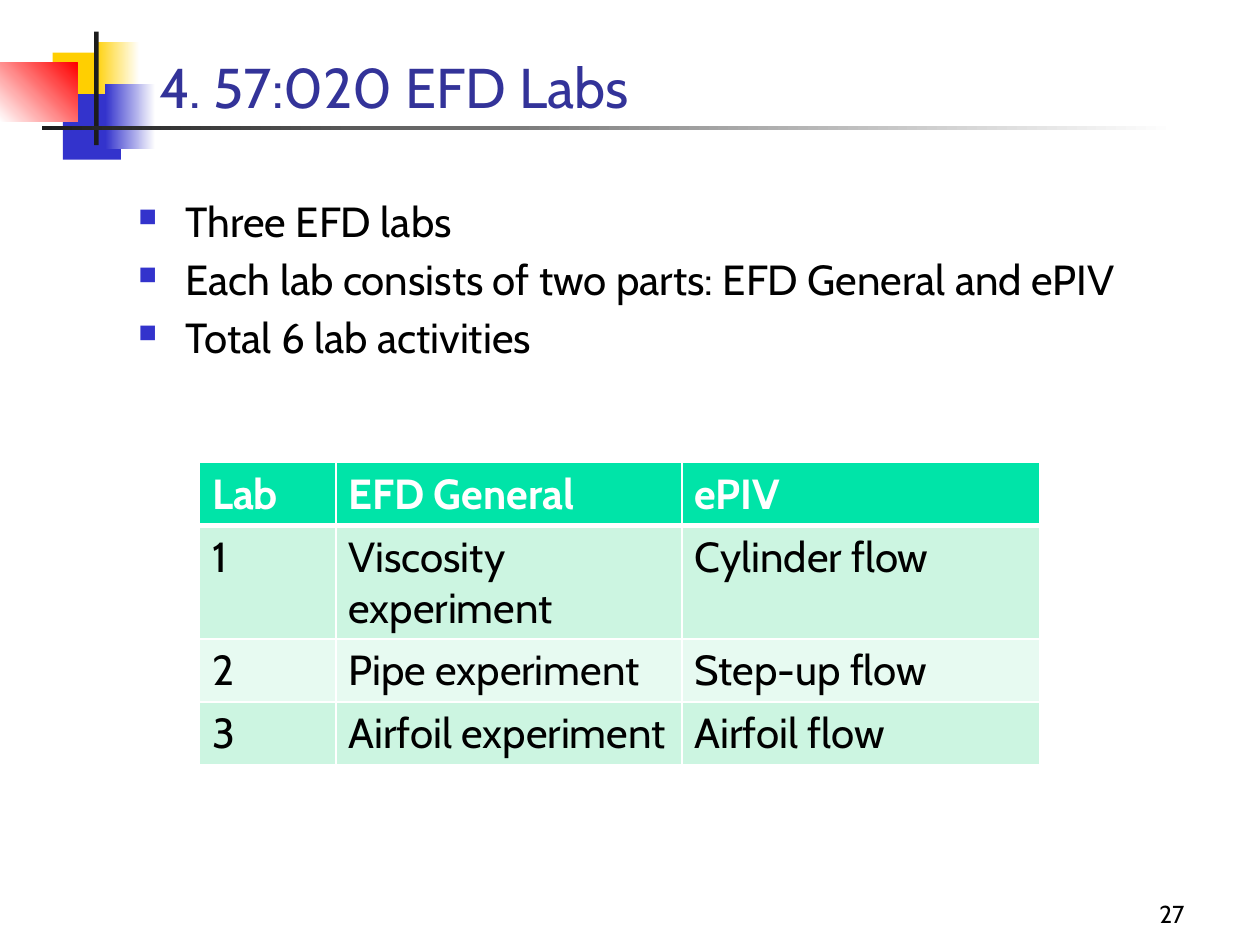
import dataclasses

import pptx
import pptx.dml.color
import pptx.enum.shapes
import pptx.enum.text
import pptx.oxml
import pptx.oxml.ns
import pptx.util
from pptx.util import Cm


@dataclasses.dataclass(frozen=True)
class Theme:
    font: str = "Cabin"
    title_size: int = 32
    body_size: int = 24
    number_size: int = 14
    title: str = "333399"
    text: str = "000000"
    white: str = "FFFFFF"
    yellow: str = "FFCF01"
    blue: str = "3333CC"
    red: str = "FF0000"
    rule: str = "1C1C1C"
    header: str = "00E4A8"
    bands: tuple = ("CCF5E1", "E7FAF1")


theme = Theme()
color = pptx.dml.color.RGBColor.from_string
anchors = pptx.enum.text.MSO_ANCHOR


def style(paragraph, size, hex_color, bold=False):
    paragraph.font.name = theme.font
    paragraph.font.size = pptx.util.Pt(size)
    paragraph.font.color.rgb = color(hex_color)
    paragraph.font.bold = bold


def add_text(left, top, width, height, anchor, lines, size, hex_color):
    """Add a wrapping text box and return its paragraphs."""
    box = slide.shapes.add_textbox(Cm(left), Cm(top), Cm(width), Cm(height))
    frame = box.text_frame
    frame.word_wrap = True
    frame.vertical_anchor = anchor
    frame.text = "\n".join(lines)
    for paragraph in frame.paragraphs:
        style(paragraph, size, hex_color)
    return frame.paragraphs


presentation = pptx.Presentation()
presentation.slide_width, presentation.slide_height = Cm(25.4), Cm(19.05)
slide = presentation.slides.add_slide(presentation.slide_layouts[6])

# Corner ornament: left, top, width, height, colours, gradient angle
ornament = [
    (1.06, 1.06, 1.22, 1.32, [theme.yellow], 0),
    (1.9, 0.85, 0.91, 1.32, [theme.yellow, theme.white], 0),
    (1.27, 1.9, 1.17, 1.32, [theme.blue], 0),
    (2.12, 1.69, 1.01, 1.32, [theme.blue, theme.white], 0),
    (0, 1.27, 1.56, 1.18, [theme.white, theme.red], 45),
    (1.9, 0.64, 0.09, 2.29, [theme.rule], 0),
    (0.85, 2.54, 22.86, 0.08, [theme.rule, theme.white], 0),
]
for left, top, width, height, colors, angle in ornament:
    shape = slide.shapes.add_shape(
        pptx.enum.shapes.MSO_SHAPE.RECTANGLE, Cm(left), Cm(top), Cm(width), Cm(height))
    shape.shadow.inherit = False
    shape.line.fill.background()
    if len(colors) == 1:
        shape.fill.solid()
        shape.fill.fore_color.rgb = color(colors[0])
    else:
        shape.fill.gradient()
        shape.fill.gradient_angle = angle
        for stop, hex_color in zip(shape.fill.gradient_stops, colors):
            stop.color.rgb = color(hex_color)

add_text(2.96, 0, 21.64, 2.54, anchors.BOTTOM, ["4. 57:020 EFD Labs"],
         theme.title_size, theme.title)
number = add_text(18.84, 17.57, 5.29, 1.27, anchors.BOTTOM, ["27"],
                  theme.number_size, theme.text)[0]
number.alignment = pptx.enum.text.PP_ALIGN.RIGHT

# Lab table
rows = [
    ("Lab", "EFD General", "ePIV"),
    ("1", "Viscosity experiment", "Cylinder flow"),
    ("2", "Pipe experiment", "Step-up flow"),
    ("3", "Airfoil experiment", "Airfoil flow"),
]
column_widths = [2.75, 6.98, 7.2]
row_height = 1.03
table = slide.shapes.add_table(
    len(rows), len(column_widths), Cm(4.02), Cm(9.32),
    Cm(sum(column_widths)), Cm(row_height * len(rows))).table
for column, width in zip(table.columns, column_widths):
    column.width = Cm(width)

for row_index, labels in enumerate(rows):
    is_header = row_index == 0
    table.rows[row_index].height = Cm(row_height)
    border_points = {"lnL": 1, "lnR": 1,
                     "lnT": 3 if row_index == 1 else 1,
                     "lnB": 3 if is_header else 1}
    for column_index, label in enumerate(labels):
        cell = table.cell(row_index, column_index)
        cell.text = label
        style(cell.text_frame.paragraphs[0], theme.body_size,
              theme.white if is_header else theme.text, is_header)
        cell_properties = cell._tc.get_or_add_tcPr()
        for side, points in border_points.items():
            cell_properties.append(pptx.oxml.parse_xml(
                f'<a:{side} {pptx.oxml.ns.nsdecls("a")} w="{pptx.util.Pt(points)}">'
                f'<a:solidFill><a:srgbClr val="{theme.white}"/></a:solidFill></a:{side}>'))
        cell.fill.solid()
        cell.fill.fore_color.rgb = color(
            theme.header if is_header else theme.bands[(row_index - 1) % 2])

# Bulleted overview
bullets = add_text(2.54, 3.81, 21.59, 4.01, anchors.TOP, [
    "Three EFD labs",
    "Each lab consists of two parts: EFD General and ePIV",
    "Total 6 lab activities",
], theme.body_size, theme.text)
bullet_marks = [
    f'<a:buClr {{}}><a:srgbClr val="{theme.blue}"/></a:buClr>',
    '<a:buSzPct {} val="60000"/>',
    '<a:buChar {} char="■"/>',
]
for paragraph in bullets:
    paragraph.space_before = pptx.util.Pt(4.3)
    properties = paragraph._p.get_or_add_pPr()
    properties.set("marL", str(Cm(0.95)))
    properties.set("indent", str(-Cm(0.95)))
    for position, mark in enumerate(bullet_marks, start=1):
        properties.insert(position, pptx.oxml.parse_xml(
            mark.format(pptx.oxml.ns.nsdecls("a"))))

presentation.save("out.pptx")
